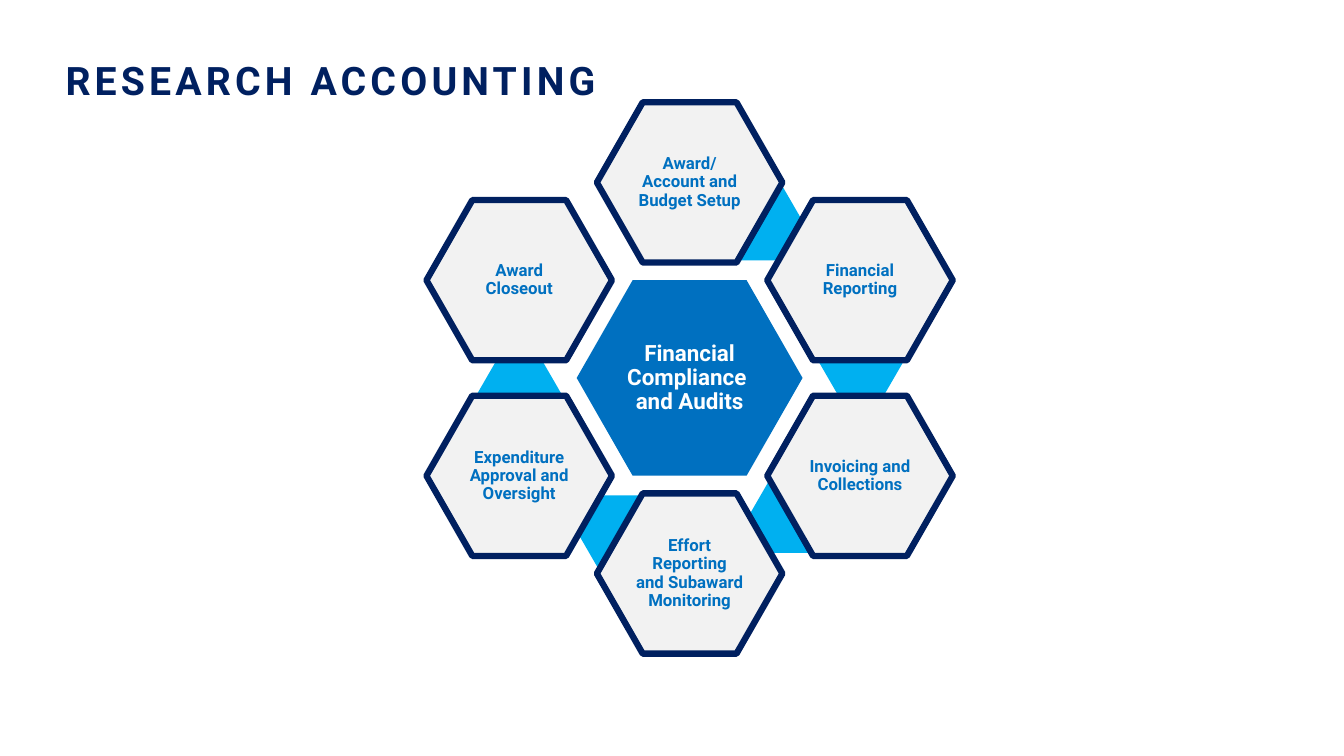
from dataclasses import dataclass
from typing import Optional

from pptx import Presentation
from pptx.dml.color import RGBColor
from pptx.enum.shapes import MSO_SHAPE
from pptx.enum.text import MSO_ANCHOR, MSO_AUTO_SIZE, PP_ALIGN
from pptx.shapes.autoshape import Shape
from pptx.shapes.shapetree import GroupShapes
from pptx.slide import Slide
from pptx.text.text import TextFrame
from pptx.util import Inches, Pt


@dataclass(frozen=True)
class Theme:
    font: str = "Roboto"
    navy: str = "002060"
    blue: str = "0070C0"
    sky: str = "00B0F0"
    pale: str = "F2F2F2"
    white: str = "FFFFFF"
    title: int = 28
    core: int = 16
    step: int = 12
    edge: float = 4.5


@dataclass(frozen=True)
class Size:
    wide: float
    high: float
    adj: float = 0.286


@dataclass(frozen=True)
class Step:
    text: str
    col: int  # columns from the centre
    row: int  # half rows from the centre
    link: Optional[tuple[float, float]] = None  # centre of the link behind it


THEME = Theme()

# Ring geometry, in inches
MID_X, MID_Y = 6.84, 3.75
COL, ROW = 1.69, 0.97
CORE, CORE_TEXT = Size(2.24, 1.94), Size(1.5, 1.3)
CELL, CELL_TEXT = Size(1.84, 1.59), Size(1.23, 1.06)
LINK = Size(0.85, 0.73, 0.289)

STEPS = [
    Step("Award/\nAccount and Budget Setup", 0, -2, (7.55, 2.22)),
    Step("Financial\nReporting", 1, -1, (8.54, 3.58)),
    Step("Invoicing and\nCollections", 1, 1, (7.85, 5.12)),
    Step("Effort Reporting\nand Subaward\nMonitoring", 0, 2, (6.15, 5.28)),
    Step("Expenditure\nApproval and Oversight", -1, 1, (5.15, 3.92)),
    Step("Award\nCloseout", -1, -1),
]


def place(x: float, y: float, size: Size) -> tuple:
    """Give the box of a size centred on a point."""
    return (Inches(x - size.wide / 2), Inches(y - size.high / 2),
            Inches(size.wide), Inches(size.high))


def write(frame: TextFrame, text: str, size: int, color: str,
          align: PP_ALIGN, space: int = 0) -> None:
    para = frame.paragraphs[0]
    para.alignment = align
    para.line_spacing = 0.9
    for num, line in enumerate(text.split("\n")):
        if num:
            para.add_line_break()
        run = para.add_run()
        run.text = line
        font = run.font
        font.name, font.size, font.bold = THEME.font, Pt(size), True
        font.color.rgb = RGBColor.from_string(color)
        if space:
            run._r.get_or_add_rPr().set("spc", str(space * 100))


def add_hex(shapes: GroupShapes, x: float, y: float, size: Size,
            fill: str, edge: Optional[str] = None) -> Shape:
    shape = shapes.add_shape(MSO_SHAPE.HEXAGON, *place(x, y, size))
    shape.adjustments[0] = size.adj
    shape.shadow.inherit = False
    shape.fill.solid()
    shape.fill.fore_color.rgb = RGBColor.from_string(fill)
    if edge:
        shape.line.color.rgb = RGBColor.from_string(edge)
        shape.line.width = Pt(THEME.edge)
    else:
        shape.line.fill.background()
    return shape


def add_label(shapes: GroupShapes, x: float, y: float, box: Size,
              text: str, size: int, color: str) -> None:
    frame = shapes.add_textbox(*place(x, y, box)).text_frame
    frame.word_wrap = True
    frame.vertical_anchor = MSO_ANCHOR.MIDDLE
    frame.margin_left = frame.margin_right = Inches(0.02)
    frame.margin_top = frame.margin_bottom = Inches(0.02)
    write(frame, text, size, color, PP_ALIGN.CENTER)


def add_title(slide: Slide, text: str) -> None:
    title = slide.shapes.title
    title.left, title.top = Inches(0.55), Inches(0.58)
    title.width, title.height = Inches(12), Inches(0.48)
    frame = title.text_frame
    frame.auto_size = MSO_AUTO_SIZE.NONE
    frame.vertical_anchor = MSO_ANCHOR.MIDDLE
    write(frame, text, THEME.title, THEME.navy, PP_ALIGN.LEFT, space=3)


def add_ring(slide: Slide) -> None:
    shapes = slide.shapes.add_group_shape().shapes

    # Centre
    add_hex(shapes, MID_X, MID_Y, CORE, THEME.blue)
    add_label(shapes, MID_X, MID_Y, CORE_TEXT,
              "Financial Compliance \nand Audits", THEME.core, THEME.white)

    # Steps, each over its link
    for step in STEPS:
        x, y = MID_X + step.col * COL, MID_Y + step.row * ROW
        if step.link:
            add_hex(shapes, *step.link, LINK, THEME.sky)
        add_hex(shapes, x, y, CELL, THEME.pale, THEME.navy)
        add_label(shapes, x, y, CELL_TEXT, step.text, THEME.step, THEME.blue)


def main() -> None:
    deck = Presentation()
    deck.slide_width, deck.slide_height = Inches(13.33), Inches(7.5)
    slide = deck.slides.add_slide(deck.slide_layouts[5])
    add_title(slide, "RESEARCH ACCOUNTING")
    add_ring(slide)
    deck.save("out.pptx")


if __name__ == "__main__":
    main()
